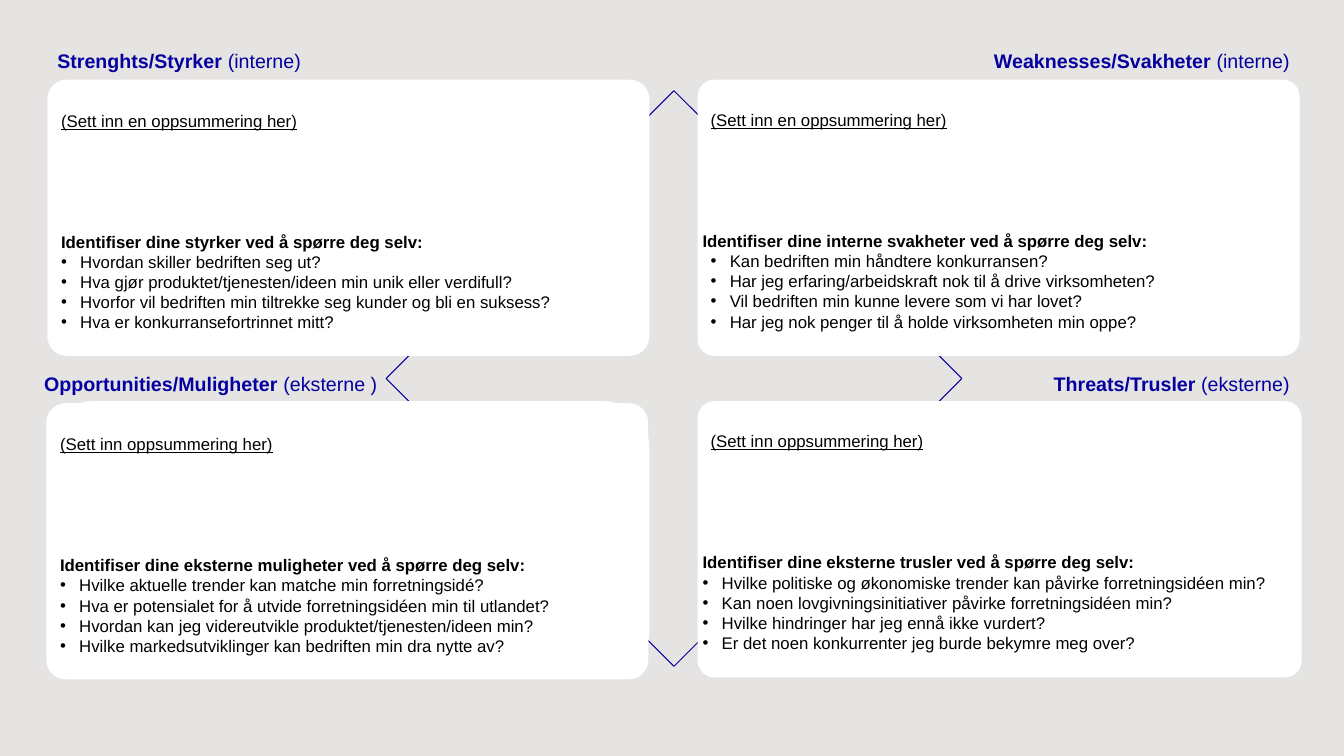
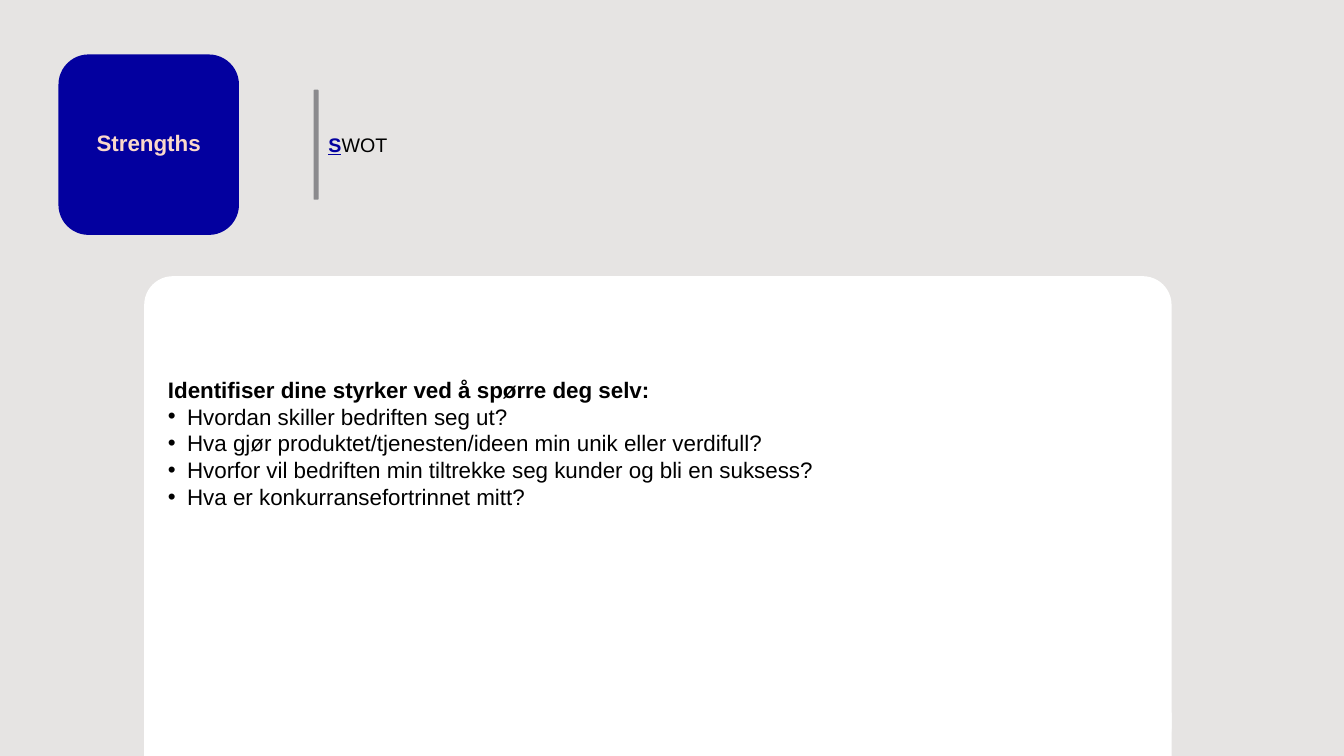
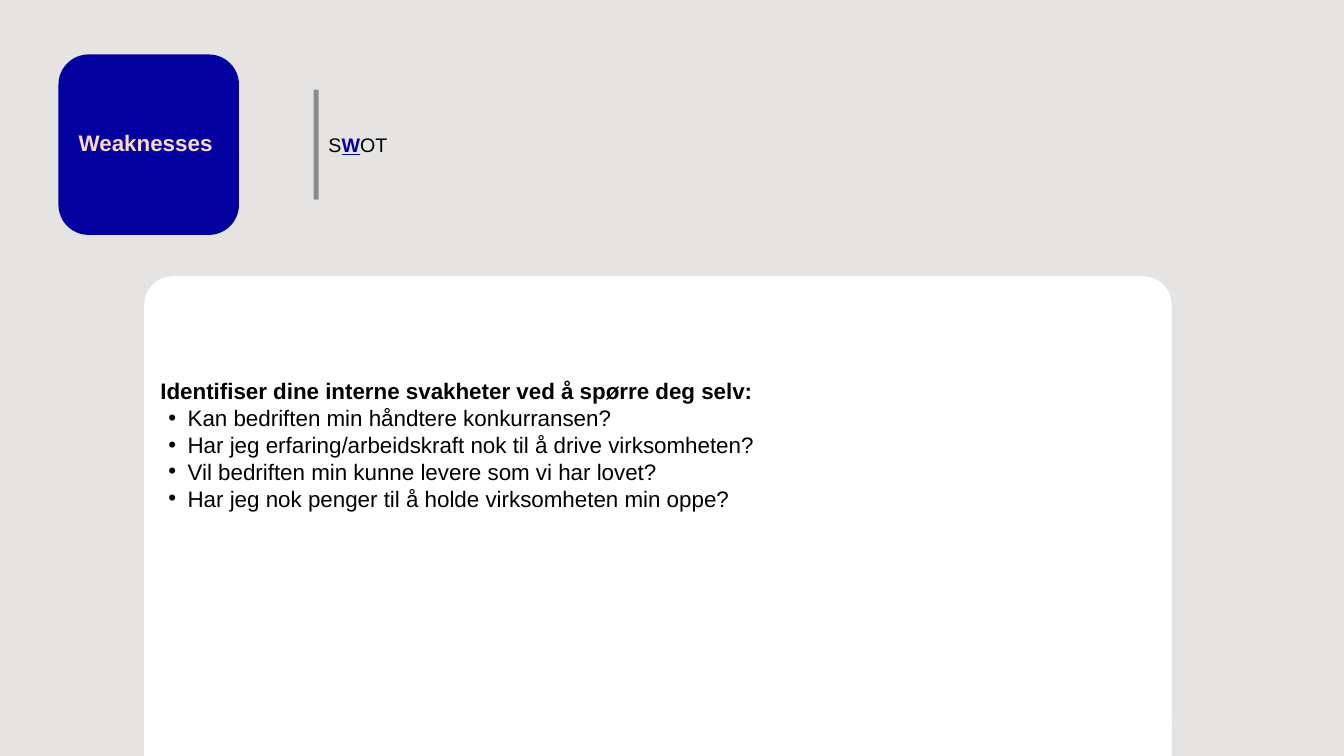
from dataclasses import dataclass

from lxml import etree
from pptx import Presentation
from pptx import util as u
from pptx.dml.color import RGBColor
from pptx.enum import shapes, text
from pptx.oxml.ns import qn

COLOURS = {
    "ground": "E6E4E3",
    "panel": "FFFFFF",
    "navy": "03009F",
    "peach": "FBD9CA",
    "grey": "8B8A8D",
    "ink": "000000",
}
FONT = "Arial"
HANGING = 0.19
ROUNDED = shapes.MSO_SHAPE.ROUNDED_RECTANGLE
LEFT, RIGHT = text.PP_ALIGN.LEFT, text.PP_ALIGN.RIGHT
TOP, MIDDLE = text.MSO_ANCHOR.TOP, text.MSO_ANCHOR.MIDDLE


@dataclass(frozen=True)
class Box:
    left: float
    top: float
    width: float
    height: float

    def lengths(self) -> tuple:
        return tuple(u.Inches(n) for n in (self.left, self.top, self.width, self.height))


@dataclass(frozen=True)
class Span:
    text: str
    colour: str = "ink"
    bold: bool = False
    underline: bool = False


@dataclass(frozen=True)
class Questions:
    heading: str
    items: tuple[str, ...]
    heading_indent: float = 0.08
    item_indent: float = 0.27


@dataclass(frozen=True)
class Quadrant:
    name: str
    scope: str
    label: Box
    align: text.PP_ALIGN
    panel: Box
    corner: float
    summary: str
    questions: Questions
    backing: Box | None = None


@dataclass(frozen=True)
class Detail:
    title: str
    letter: int
    questions: Questions
    text_height: float
    bottom_inset: float = 0.05


STRENGTHS = Questions("Identifiser dine styrker ved å spørre deg selv:", (
    "Hvordan skiller bedriften seg ut?",
    "Hva gjør produktet/tjenesten/ideen min unik eller verdifull?",
    "Hvorfor vil bedriften min tiltrekke seg kunder og bli en suksess?",
    "Hva er konkurransefortrinnet mitt?",
))
WEAKNESSES = Questions("Identifiser dine interne svakheter ved å spørre deg selv:", (
    "Kan bedriften min håndtere konkurransen?",
    "Har jeg erfaring/arbeidskraft nok til å drive virksomheten?",
    "Vil bedriften min kunne levere som vi har lovet?",
    "Har jeg nok penger til å holde virksomheten min oppe?",
), heading_indent=0)
OPPORTUNITIES = Questions("Identifiser dine eksterne muligheter ved å spørre deg selv:", (
    "Hvilke aktuelle trender kan matche min forretningsidé?",
    "Hva er potensialet for å utvide forretningsidéen min til utlandet?",
    "Hvordan kan jeg videreutvikle produktet/tjenesten/ideen min?",
    "Hvilke markedsutviklinger kan bedriften min dra nytte av?",
))
THREATS = Questions("Identifiser dine eksterne trusler ved å spørre deg selv:", (
    "Hvilke politiske og økonomiske trender kan påvirke forretningsidéen min?",
    "Kan noen lovgivningsinitiativer påvirke forretningsidéen min?",
    "Hvilke hindringer har jeg ennå ikke vurdert?",
    "Er det noen konkurrenter jeg burde bekymre meg over?",
), heading_indent=0, item_indent=0.19)

INTERNAL_SUMMARY = "(Sett inn en oppsummering her)"
EXTERNAL_SUMMARY = "(Sett inn oppsummering her)"
QUADRANTS = (
    Quadrant("Strenghts/Styrker ", "(interne)", Box(0.47, 0.44, 3.61, 0.34), LEFT,
             Box(0.47, 0.79, 5.97, 2.74), 0.07, INTERNAL_SUMMARY, STRENGTHS),
    Quadrant("Weaknesses/Svakheter ", "(interne)", Box(9.28, 0.44, 3.61, 0.34), RIGHT,
             Box(6.92, 0.79, 5.97, 2.74), 0.06, INTERNAL_SUMMARY, WEAKNESSES),
    Quadrant("Opportunities/Muligheter ", "(eksterne )", Box(0.34, 3.64, 3.61, 0.34), LEFT,
             Box(0.46, 4, 5.97, 2.74), 0.07, EXTERNAL_SUMMARY, OPPORTUNITIES,
             backing=Box(0.47, 3.98, 5.97, 2.74)),
    Quadrant("Threats/Trusler ", "(eksterne)", Box(9.28, 3.64, 3.61, 0.34), RIGHT,
             Box(6.92, 3.98, 5.99, 2.74), 0.06, EXTERNAL_SUMMARY, THREATS),
)
DETAILS = (
    Detail("Strengths", 0, STRENGTHS, 3.29),
    Detail("Weaknesses ", 1, WEAKNESSES, 3.58, bottom_inset=0.31),
)


def rgb(name: str) -> RGBColor:
    return RGBColor.from_string(COLOURS[name])


def add_shape(page, kind, box: Box, fill: str | None = None, line: str | None = None,
              corner: float | None = None):
    shape = page.shapes.add_shape(kind, *box.lengths())
    shape.shadow.inherit = False
    if fill:
        shape.fill.solid()
        shape.fill.fore_color.rgb = rgb(fill)
    else:
        shape.fill.background()
    if line:
        shape.line.color.rgb = rgb(line)
        shape.line.width = u.Pt(0.75)
    else:
        shape.line.fill.background()
    if corner is not None:
        shape.adjustments[0] = corner
    return shape


def set_frame(shape, anchor, side: float = 0.1, top: float = 0.05, bottom: float = 0.05):
    frame = shape.text_frame
    frame.word_wrap = True
    frame.vertical_anchor = anchor
    frame.margin_left = frame.margin_right = u.Inches(side)
    frame.margin_top, frame.margin_bottom = u.Inches(top), u.Inches(bottom)
    return frame


def write(para, spans: tuple[Span, ...], size: float, align=LEFT) -> None:
    para.alignment = align
    para.font.name, para.font.size = FONT, u.Pt(size)
    for span in spans:
        run = para.add_run()
        run.text = span.text
        run.font.color.rgb = rgb(span.colour)
        run.font.bold = span.bold
        run.font.underline = span.underline


def indent(para, left: float, bullet: bool = False) -> None:
    props = para._p.get_or_add_pPr()
    props.set("marL", str(u.Inches(left)))
    if bullet:
        props.set("indent", str(-u.Inches(HANGING)))
        etree.SubElement(props, qn("a:buFont")).set("typeface", FONT)
        etree.SubElement(props, qn("a:buChar")).set("char", "•")


def write_questions(frame, heading, questions: Questions, size: float) -> None:
    """Fill the heading paragraph and add one bullet for each question."""
    write(heading, (Span(questions.heading, bold=True),), size)
    indent(heading, questions.heading_indent)
    for item in questions.items:
        para = frame.add_paragraph()
        write(para, (Span(item),), size)
        indent(para, questions.item_indent, bullet=True)


def add_label(page, box: Box, spans: tuple[Span, ...], align=LEFT) -> None:
    label = page.shapes.add_textbox(*box.lengths())
    write(set_frame(label, TOP).paragraphs[0], spans, 14, align)


def add_quadrant(page, quadrant: Quadrant) -> None:
    if quadrant.backing:
        add_shape(page, ROUNDED, quadrant.backing, "panel")
    panel = add_shape(page, ROUNDED, quadrant.panel, "panel", corner=quadrant.corner)
    frame = set_frame(panel, TOP, side=0, top=0.25)
    summary = frame.paragraphs[0]
    write(summary, (Span(quadrant.summary, underline=True),), 12)
    indent(summary, 0.08)
    heading = frame.add_paragraph()
    heading.space_before = u.Pt(72)
    write_questions(frame, heading, quadrant.questions, 12)
    add_label(page, quadrant.label, (Span(quadrant.name, "navy", bold=True),
                                     Span(quadrant.scope, "navy")), quadrant.align)


def add_overview(deck) -> None:
    page = deck.slides.add_slide(deck.slide_layouts[6])
    add_shape(page, shapes.MSO_SHAPE.DIAMOND, Box(3.83, 0.9, 5.71, 5.71), line="navy")
    for quadrant in QUADRANTS:
        add_quadrant(page, quadrant)


def add_detail(deck, detail: Detail) -> None:
    page = deck.slides.add_slide(deck.slide_layouts[6])
    add_shape(page, ROUNDED, Box(1.43, 2.74, 10.19, 4.76), "panel", corner=0.06)
    body = add_shape(page, ROUNDED, Box(1.43, 2.75, 10.19, detail.text_height), corner=0.06)
    frame = set_frame(body, MIDDLE, bottom=detail.bottom_inset)
    write_questions(frame, frame.paragraphs[0], detail.questions, 16)

    tile = add_shape(page, ROUNDED, Box(0.58, 0.54, 1.79, 1.79), "navy")
    title = set_frame(tile, MIDDLE, side=0).paragraphs[0]
    title.line_spacing = 0.9
    write(title, (Span(detail.title, "peach", bold=True),), 16, text.PP_ALIGN.CENTER)

    add_shape(page, ROUNDED, Box(3.11, 0.89, 0.05, 1.09), "grey")
    add_shape(page, shapes.MSO_SHAPE.RECTANGLE, Box(1.43, 7.07, 10.19, 0.43), "panel")
    word, at = "SWOT", detail.letter
    spans = (Span(word[:at]), Span(word[at], "navy", bold=True, underline=True),
             Span(word[at + 1:]))
    add_label(page, Box(3.16, 1.27, 3.8, 0.34), tuple(span for span in spans if span.text))


def main() -> None:
    deck = Presentation()
    deck.slide_width, deck.slide_height = u.Inches(13.33), u.Inches(7.5)
    ground = deck.slide_master.background.fill
    ground.solid()
    ground.fore_color.rgb = rgb("ground")
    add_overview(deck)
    for detail in DETAILS:
        add_detail(deck, detail)
    deck.save("out.pptx")


if __name__ == "__main__":
    main()
